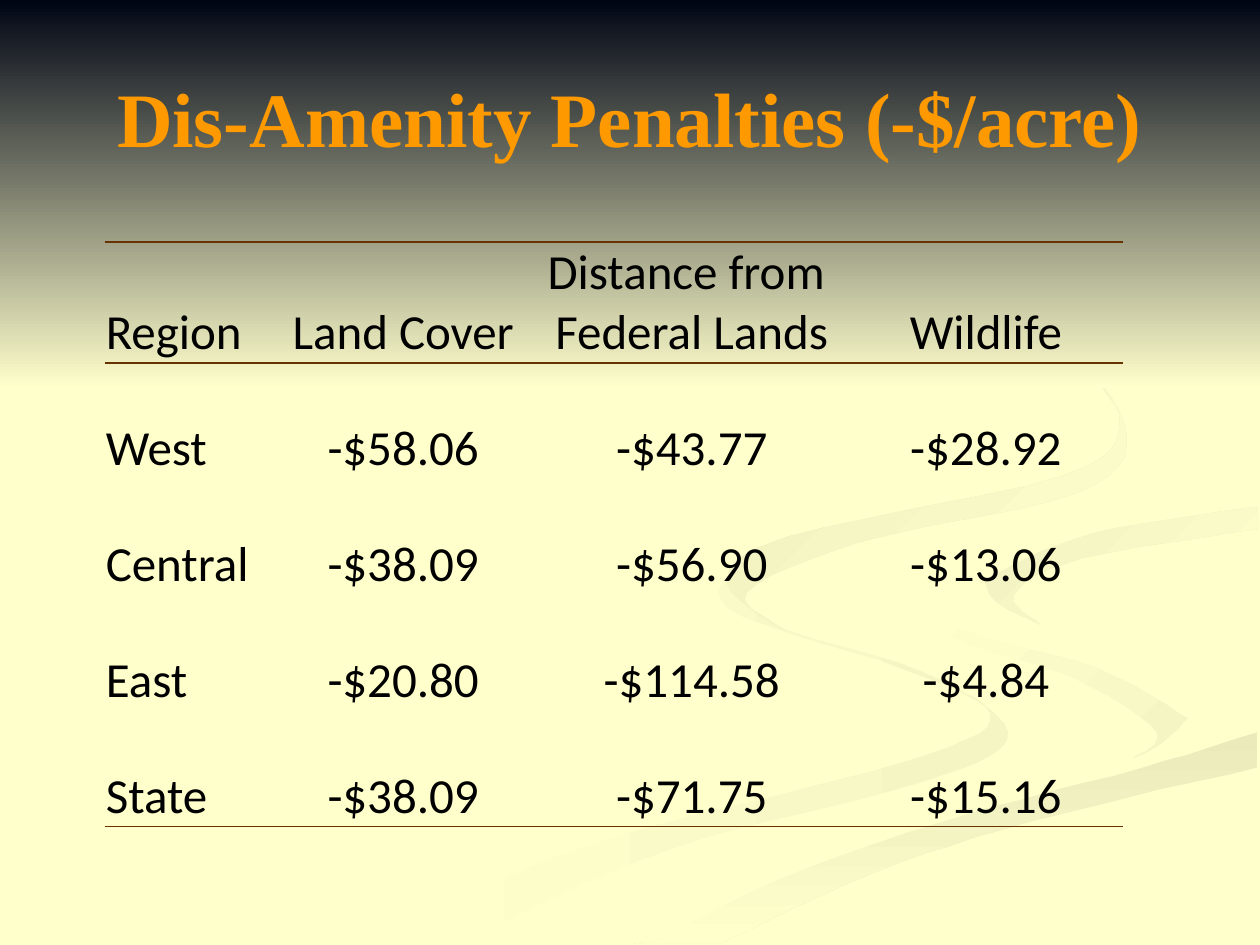
"""Builds the slide of dis-amenity penalties by region on a ribbon background."""
from lxml import etree
from pptx import Presentation
from pptx.dml.color import RGBColor
from pptx.enum.text import MSO_ANCHOR, MSO_AUTO_SIZE, PP_ALIGN
from pptx.oxml.ns import qn
from pptx.util import Inches, Pt

LEFT, CENTER = PP_ALIGN.LEFT, PP_ALIGN.CENTER
MIDDLE, BOTTOM = MSO_ANCHOR.MIDDLE, MSO_ANCHOR.BOTTOM
NO_AUTOFIT = MSO_AUTO_SIZE.NONE
CREAM, NIGHT, ORANGE, BROWN, BLACK = "FFFFCC", "000514", "FF9900", "663300", "000000"
CURVE_STEPS = 6


def color(hex_string):
    return RGBColor.from_string(hex_string)


def smooth(edge):
    """Return a Catmull-Rom curve through the points of one ribbon edge."""
    padded = [edge[0], *edge, edge[-1]]
    curve = [edge[0]]
    for knots in zip(padded, padded[1:], padded[2:], padded[3:]):
        for step in range(1, CURVE_STEPS + 1):
            t = step / CURVE_STEPS
            curve.append(tuple(
                (2 * b + (c - a) * t + (2 * a - 5 * b + 4 * c - d) * t ** 2
                 + (3 * b - a - 3 * c + d) * t ** 3) / 2
                for a, b, c, d in zip(*knots)))
    return curve


long_edge = [(519, 747), (630, 693), (765, 647), (904, 610), (998, 581)]
inner_edge = [(725, 464), (759, 498), (871, 530), (943, 570)]
branch_edge = [(998, 402), (865, 424), (781, 460)]

ribbons = [
    (CREAM, "F5F5C4", 0, [
        [(575, 459), (614, 496), (731, 533), (800, 581), (740, 618), (532, 674), (361, 749)],
        [(300, 749), (458, 674), (727, 602), (786, 566), (714, 530), (593, 491), (570, 470)]]),
    (CREAM, "F5F5C4", 45, [
        inner_edge, [(943, 570), (932, 589), (894, 605)],
        [(894, 605), (918, 581), (854, 539), (755, 505), (724, 464)]]),
    ("EAEABB", CREAM, 90, [
        [(503, 749), (571, 749)],
        [(571, 749), (695, 692), (821, 651), (998, 609)], long_edge[::-1]]),
    (CREAM, CREAM, 0, [
        inner_edge, [(943, 570), (892, 605), (704, 655), (477, 749)], long_edge,
        [(998, 538), (832, 498), (781, 463)], branch_edge[::-1],
        [(998, 387), (788, 422), (725, 464)]]),
    ("F1F1C1", CREAM, 45, [
        branch_edge, [(781, 460), (791, 478), (826, 496)],
        [(826, 496), (805, 472), (859, 443), (998, 420)]]),
    ("EDEDBE", CREAM, 45, [
        [(762, 233), (846, 279), (889, 335), (842, 378), (625, 426), (577, 462), (622, 500)],
        [(622, 500), (593, 470), (683, 430), (855, 391), (894, 344), (843, 275), (762, 233)]]),
    (NIGHT, CREAM, 90, [[(0, 0), (0, 308)], [(1000, 308), (1000, 0)]]),
]

column_widths = (1.33, 2.08, 2.5, 2.17)
penalties = [
    ("Region", "Land Cover", "Distance from \nFederal Lands", "Wildlife"),
    ("West", "-$58.06", "-$43.77", "-$28.92"),
    ("Central", "-$38.09", "-$56.90", "-$13.06"),
    ("East", "-$20.80", "-$114.58", "-$4.84"),
    ("State", "-$38.09", "-$71.75", "-$15.16"),
]
ruled_edges = {(0, "T"), (0, "B"), (1, "T"), (len(penalties) - 1, "B")}

prs = Presentation()
prs.slide_width, prs.slide_height = Inches(10), Inches(7.5)
slide = prs.slides.add_slide(prs.slide_layouts[5])
slide.background.fill.solid()
slide.background.fill.fore_color.rgb = color(CREAM)

for start, end, angle, edges in ribbons:
    outline = [point for edge in edges for point in smooth(edge)]
    builder = slide.shapes.build_freeform(*outline[0], scale=Inches(0.01))
    builder.add_line_segments(outline[1:], close=True)
    ribbon = builder.convert_to_shape()
    ribbon.shadow.inherit = False
    ribbon.line.fill.background()
    ribbon.fill.gradient()
    ribbon.fill.gradient_angle = (360 - angle) % 360
    for stop, stop_color in zip(ribbon.fill.gradient_stops, (start, end)):
        stop.color.rgb = color(stop_color)

title = slide.shapes.title
slide.shapes.element.append(title.element)
title.left, title.top = Inches(0.5), Inches(0.3)
title.width, title.height = Inches(9), Inches(1.25)
title.text_frame.auto_size = NO_AUTOFIT
title.text_frame.vertical_anchor = MIDDLE
heading = title.text_frame.paragraphs[0]
heading.alignment = CENTER
heading_run = heading.add_run()
heading_run.text = "Dis-Amenity Penalties (-$/acre)"
heading_run.font.name, heading_run.font.size = "Times New Roman", Pt(44)
heading_run.font.bold = True
heading_run.font.color.rgb = color(ORANGE)

table = slide.shapes.add_table(
    len(penalties), len(column_widths),
    Inches(0.83), Inches(1.92), Inches(sum(column_widths)), Inches(4.6)).table
table.first_row = table.horz_banding = False
for column, width in zip(table.columns, column_widths):
    column.width = Inches(width)

for row, values in enumerate(penalties):
    table.rows[row].height = Inches(0.92)
    for col, value in enumerate(values):
        cell = table.cell(row, col)
        cell.vertical_anchor = BOTTOM
        cell.margin_left = cell.margin_right = cell.margin_top = Inches(0.01)
        cell.margin_bottom = 0
        for number, text in enumerate(value.split("\n")):
            frame = cell.text_frame
            paragraph = frame.add_paragraph() if number else frame.paragraphs[0]
            paragraph.alignment = CENTER if col else LEFT
            run = paragraph.add_run()
            run.text = text
            run.font.name, run.font.size = "Calibri", Pt(28)
            run.font.bold = False
            run.font.color.rgb = color(BLACK)
        properties = cell._tc.get_or_add_tcPr()
        for side in "LRTB":
            border = etree.SubElement(properties, qn(f"a:ln{side}"), w=str(Pt(1)))
            if (row, side) in ruled_edges:
                stroke = etree.SubElement(border, qn("a:solidFill"))
                etree.SubElement(stroke, qn("a:srgbClr"), val=BROWN)
            else:
                etree.SubElement(border, qn("a:noFill"))
        cell.fill.background()

prs.save("out.pptx")
